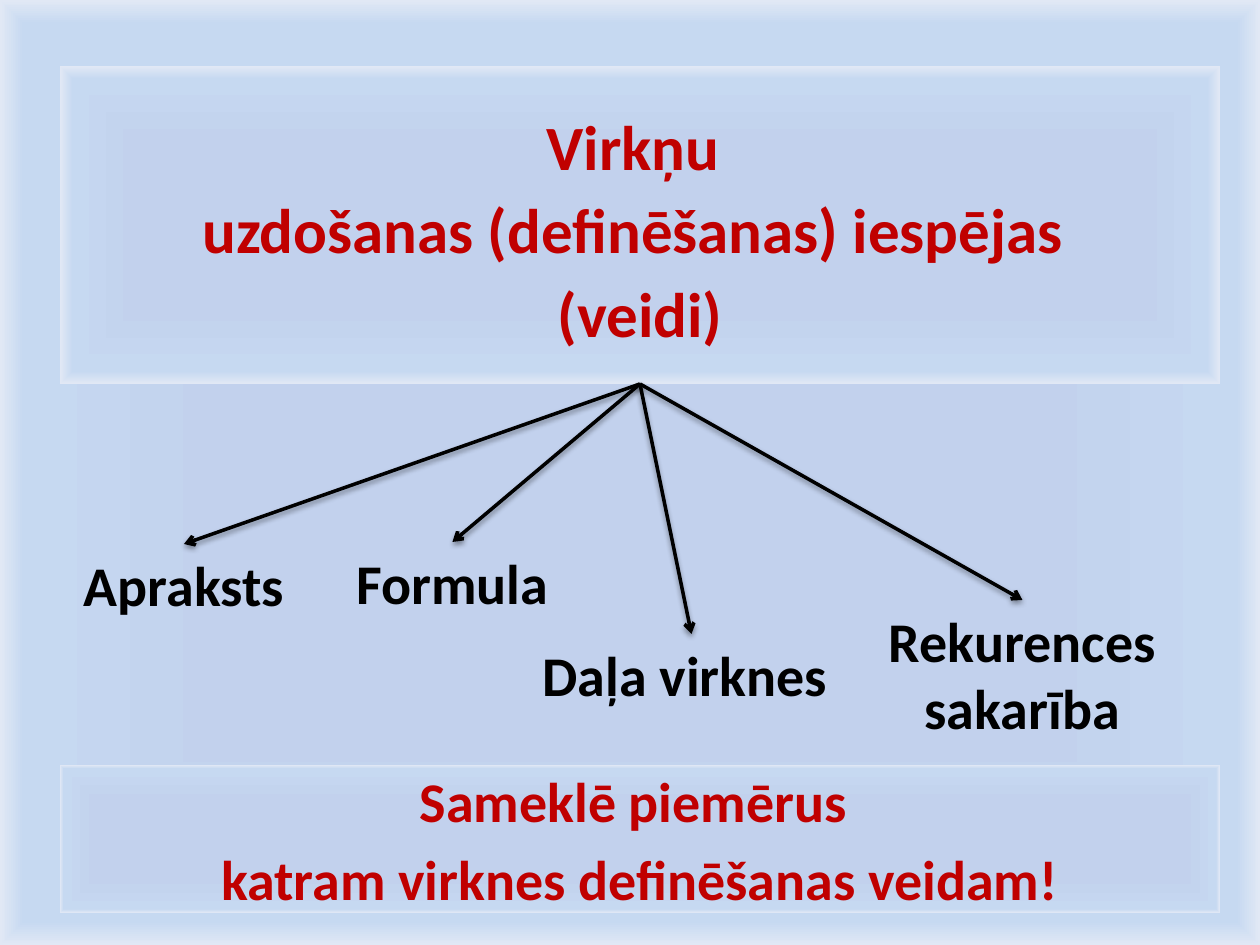
from pptx import Presentation
from pptx.dml.color import RGBColor
from pptx.enum.shapes import MSO_CONNECTOR, MSO_SHAPE
from pptx.enum.text import MSO_ANCHOR, MSO_AUTO_SIZE, PP_ALIGN
from pptx.oxml import parse_xml
from pptx.oxml.ns import nsdecls, qn
from pptx.util import Emu, Pt

PX = 914400 // 126
COLORS = {"core": "C2D1ED", "mid": "C6D9F1", "edge": "E1E8F5",
          "red": "C00000", "black": "000000"}
LABELS = [
    ("Apraksts", (24, 544, 320, 81)),
    ("Daļa virknes ", (529, 634, 325, 81)),
    ("Rekurences sakarība", (839, 600, 367, 149)),
    ("Formula", (280, 542, 345, 81)),
]


def scale(box):
    """Turn px lengths into EMU."""
    return [Emu(n * PX) for n in box]


def shade(owner, root, stop):
    """Fill the owner with a gradient that spreads from its centre."""
    owner.fill.solid()
    solid = next(root.iter(qn("a:solidFill")))
    stops = "".join(
        f'<a:gs pos="{pos * 1000}"><a:srgbClr val="{COLORS[name]}"/></a:gs>'
        for pos, name in ((50, "core"), (stop, "mid"), (100, "edge")))
    grad = parse_xml(
        f'<a:gradFill {nsdecls("a")} rotWithShape="1"><a:gsLst>{stops}</a:gsLst>'
        '<a:path path="shape"><a:fillToRect l="50000" t="50000" r="50000" b="50000"/>'
        '</a:path></a:gradFill>')
    solid.getparent().replace(solid, grad)


def write(shape, text, size, color, gap=0, lead=None):
    """Set centred bold text in a shape."""
    frame = shape.text_frame
    frame.text = text
    frame.word_wrap = True
    for para in frame.paragraphs:
        para.alignment = PP_ALIGN.CENTER
        para.space_before = Pt(gap)
        para.line_spacing = lead
        for run in para.runs:
            font = run.font
            font.name, font.size, font.bold = "Calibri", Pt(size), True
            font.color.rgb = RGBColor.from_string(COLORS[color])


def add_title(slide, box):
    """Place the title panel."""
    title = slide.shapes.title
    title.left, title.top, title.width, title.height = scale(box)
    shade(title, title.element, 92)
    write(title, "Virkņu \vuzdošanas (definēšanas) iespējas \v(veidi)",
          36, "red", 7, 1.1)
    title.text_frame.auto_size = MSO_AUTO_SIZE.NONE
    title.text_frame.vertical_anchor = MSO_ANCHOR.MIDDLE
    return title


def add_label(slide, text, box):
    """Place one label below the title."""
    label = slide.shapes.add_textbox(*scale(box))
    write(label, text, 32, "black")
    label.text_frame.auto_size = MSO_AUTO_SIZE.SHAPE_TO_FIT_TEXT
    return label


def add_arrow(slide, start, end):
    """Join the foot of one shape to the top of another."""
    arrow = slide.shapes.add_connector(MSO_CONNECTOR.STRAIGHT, 0, 0, 0, 0)
    arrow.begin_connect(start, 2)
    arrow.end_connect(end, 0)
    arrow.line.width = Pt(2)
    arrow.line.color.rgb = RGBColor.from_string(COLORS["black"])
    props = arrow.element.spPr
    props.find(qn("a:ln")).append(
        parse_xml(f'<a:tailEnd {nsdecls("a")} type="arrow"/>'))
    props.append(parse_xml(
        f'<a:effectLst {nsdecls("a")}><a:outerShdw blurRad="{Pt(3.1)}" '
        f'dist="{Pt(1.6)}" dir="5400000" rotWithShape="0">'
        f'<a:srgbClr val="{COLORS["black"]}"><a:alpha val="38000"/></a:srgbClr>'
        '</a:outerShdw></a:effectLst>'))


def add_task(slide, box):
    """Place the task panel at the foot of the slide."""
    task = slide.shapes.add_shape(MSO_SHAPE.RECTANGLE, *scale(box))
    task.shadow.inherit = False
    task.line.fill.background()
    shade(task, task.element, 95)
    write(task, "Sameklē piemērus \nkatram virknes definēšanas veidam!",
          32, "red", 6)
    task.text_frame.vertical_anchor = MSO_ANCHOR.MIDDLE


def main():
    """Build and save the slide."""
    deck = Presentation()
    deck.slide_width, deck.slide_height = scale((1260, 945))
    slide = deck.slides.add_slide(deck.slide_layouts[5])
    shade(slide.background, slide.element, 95)
    title = add_title(slide, (60, 66, 1160, 318))
    for text, box in LABELS:
        add_arrow(slide, title, add_label(slide, text, box))
    add_task(slide, (60, 765, 1160, 148))
    deck.save("out.pptx")


if __name__ == "__main__":
    main()
